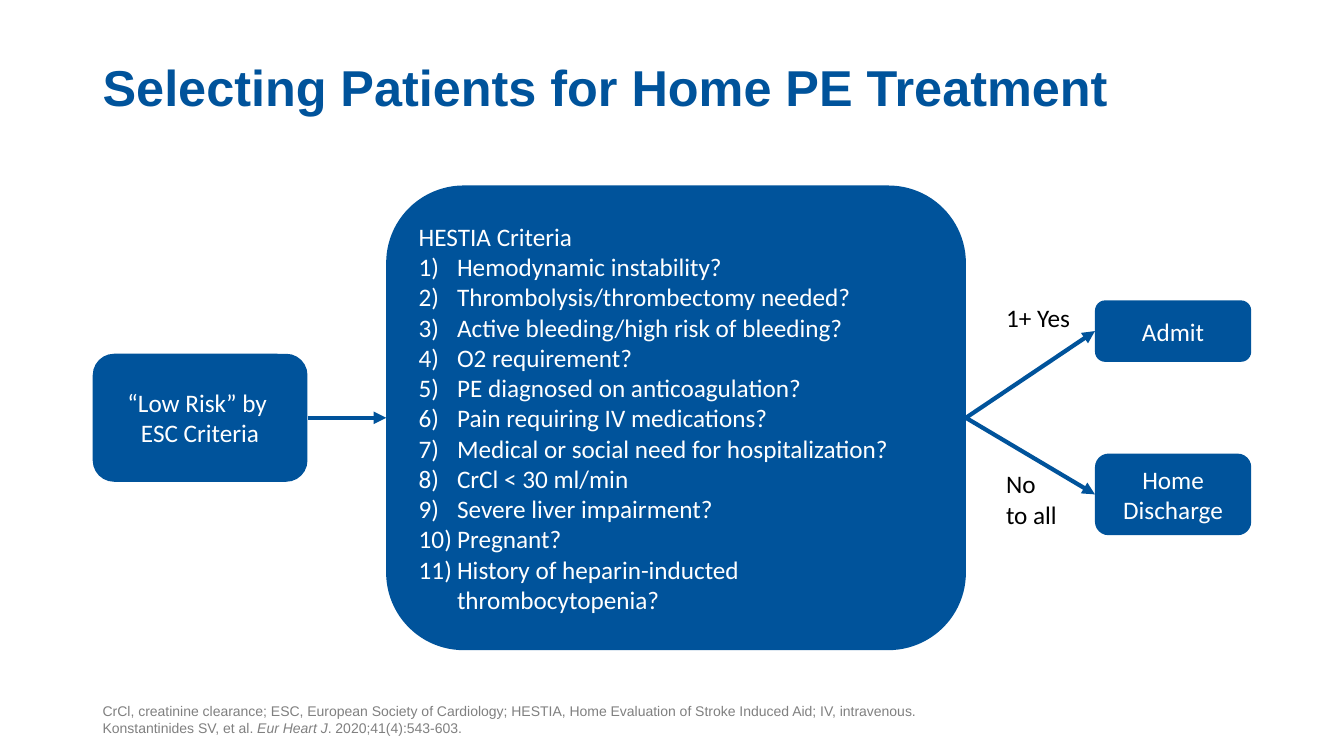
from lxml.etree import SubElement
from pptx import Presentation
from pptx.dml.color import RGBColor
from pptx.enum.shapes import MSO_CONNECTOR, MSO_SHAPE
from pptx.enum.text import MSO_ANCHOR, PP_ALIGN
from pptx.oxml.ns import qn
from pptx.util import Inches, Pt

BLUE = RGBColor(0x00, 0x53, 0x9B)
WHITE = RGBColor(0xFF, 0xFF, 0xFF)
BLACK = RGBColor(0x00, 0x00, 0x00)
GRAY = RGBColor(0x80, 0x80, 0x80)

TITLE_FORMAT = {"name": "Arial", "size": Pt(36), "bold": True}
BODY_FORMAT = {"name": "Calibri", "size": Pt(18)}
NOTE_FORMAT = {"name": "Arial", "size": Pt(10)}

CRITERIA = [
    "Hemodynamic instability?",
    "Thrombolysis/thrombectomy needed?",
    "Active bleeding/high risk of bleeding?",
    "O2 requirement?",
    "PE diagnosed on anticoagulation?",
    "Pain requiring IV medications?",
    "Medical or social need for hospitalization?",
    "CrCl < 30 ml/min",
    "Severe liver impairment?",
    "Pregnant?",
    "History of heparin-inducted thrombocytopenia?",
]


def write_text(shape, lines, font_format, color, anchor, alignment=PP_ALIGN.LEFT):
    """Fill the shape with one paragraph per line, all in the same format."""
    frame = shape.text_frame
    frame.word_wrap = True
    frame.vertical_anchor = anchor
    frame.text = "\n".join(lines)
    for paragraph in frame.paragraphs:
        paragraph.alignment = alignment
        for run in paragraph.runs:
            run.font.color.rgb = color
            for attribute, value in font_format.items():
                setattr(run.font, attribute, value)
    return frame


presentation = Presentation()
presentation.slide_width = Inches(13.33)
presentation.slide_height = Inches(7.5)
slide = presentation.slides.add_slide(presentation.slide_layouts[6])

# Title
title = slide.shapes.add_textbox(Inches(0.92), Inches(0), Inches(11.5), Inches(1.21))
title_frame = write_text(title, ["Selecting Patients for Home PE Treatment"],
                         TITLE_FORMAT, BLUE, MSO_ANCHOR.BOTTOM)
title_frame.paragraphs[0].line_spacing = 0.9

# Flow boxes
boxes = {}
for name, left, top, width, height, lines, alignment in [
    ("low risk", 0.92, 3.51, 2.13, 1.27, ["“Low Risk” by \vESC Criteria"], PP_ALIGN.CENTER),
    ("criteria", 3.83, 1.84, 5.75, 4.61, ["HESTIA Criteria"] + CRITERIA, PP_ALIGN.LEFT),
    ("admit", 10.86, 2.98, 1.55, 0.61, ["Admit"], PP_ALIGN.CENTER),
    ("home", 10.86, 4.5, 1.55, 0.81, ["Home Discharge"], PP_ALIGN.CENTER),
]:
    box = slide.shapes.add_shape(MSO_SHAPE.ROUNDED_RECTANGLE, Inches(left), Inches(top),
                                 Inches(width), Inches(height))
    box.shadow.inherit = False
    box.fill.solid()
    box.fill.fore_color.rgb = BLUE
    box.line.fill.background()
    write_text(box, lines, BODY_FORMAT, WHITE, MSO_ANCHOR.MIDDLE, alignment)
    boxes[name] = box

# Automatic numbering below the criteria heading
for paragraph in boxes["criteria"].text_frame.paragraphs[1:]:
    properties = paragraph._p.get_or_add_pPr()
    properties.set("marL", str(Inches(0.38)))
    properties.set("indent", str(-Inches(0.38)))
    SubElement(properties, qn("a:buFont"), typeface="+mj-lt")
    SubElement(properties, qn("a:buAutoNum"), type="arabicParenR")

# Arrows from the right side of one box to the left side of the next
for start, end in [("low risk", "criteria"), ("criteria", "admit"), ("criteria", "home")]:
    arrow = slide.shapes.add_connector(MSO_CONNECTOR.STRAIGHT, 0, 0, 0, 0)
    arrow.begin_connect(boxes[start], 3)
    arrow.end_connect(boxes[end], 1)
    arrow.line.color.rgb = BLUE
    arrow.line.width = Pt(3)
    SubElement(arrow.line._get_or_add_ln(), qn("a:tailEnd"), type="triangle")
    SubElement(arrow._element.spPr, qn("a:effectLst"))

# Branch labels
for text, top, width, height, wraps in [
    ("1+ Yes", 2.95, 0.84, 0.4, False),
    ("No to all", 4.6, 0.74, 0.71, True),
]:
    label = slide.shapes.add_textbox(Inches(9.88), Inches(top), Inches(width), Inches(height))
    write_text(label, [text], BODY_FORMAT, BLACK, MSO_ANCHOR.TOP).word_wrap = wraps

# Abbreviations and reference
footnote = slide.shapes.add_textbox(Inches(0.92), Inches(6.95), Inches(11.5), Inches(0.4))
footnote_frame = write_text(footnote, [
    "CrCl, creatinine clearance; ESC, European Society of Cardiology; HESTIA, "
    "Home Evaluation of Stroke Induced Aid; IV, intravenous. \vKonstantinides SV, et al. "
], NOTE_FORMAT, GRAY, MSO_ANCHOR.BOTTOM)
for text, italic in [("Eur Heart J", True), (". 2020;41(4):543-603.", False)]:
    run = footnote_frame.paragraphs[0].add_run()
    run.text = text
    run.font.color.rgb = GRAY
    for attribute, value in {**NOTE_FORMAT, "italic": italic}.items():
        setattr(run.font, attribute, value)

presentation.save("out.pptx")
